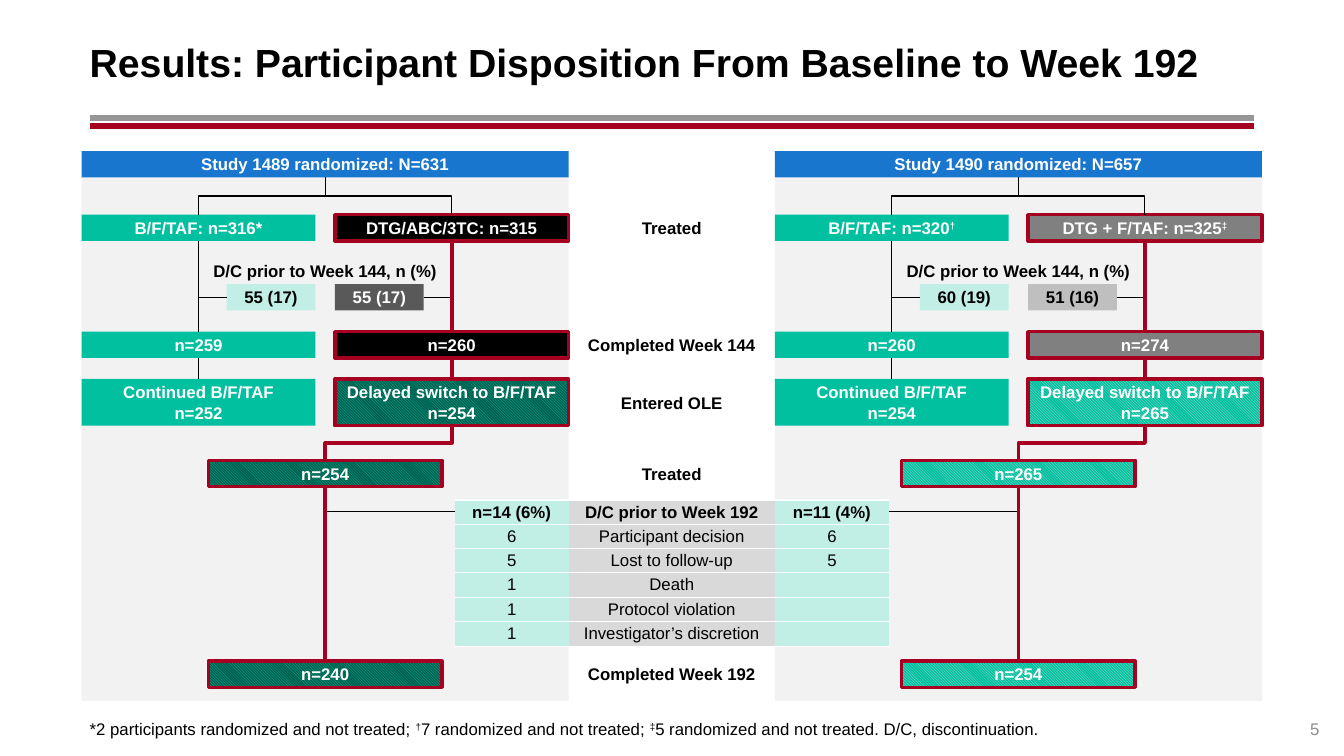
from itertools import groupby

from lxml.etree import SubElement
from pptx import Presentation
from pptx.dml.color import RGBColor
from pptx.enum.dml import MSO_PATTERN
from pptx.enum.shapes import MSO_CONNECTOR as Line, MSO_SHAPE
from pptx.enum.text import MSO_ANCHOR as Anchor, MSO_AUTO_SIZE, PP_ALIGN as Align
from pptx.oxml.ns import qn
from pptx.util import Cm, Pt

BLACK = RGBColor(0x00, 0x00, 0x00)
WHITE = RGBColor(0xFF, 0xFF, 0xFF)
RED = RGBColor(0xA5, 0x00, 0x21)
BLUE = RGBColor(0x19, 0x76, 0xCF)
TEAL = RGBColor(0x00, 0xC0, 0xA0)
DARK_TEAL = RGBColor(0x00, 0x60, 0x50)
PALE_TEAL = RGBColor(0xB8, 0xE2, 0xD8)
MINT = RGBColor(0xC1, 0xEF, 0xE6)
PANEL_GRAY = RGBColor(0xF2, 0xF2, 0xF2)
CELL_GRAY = RGBColor(0xD9, 0xD9, 0xD9)
SILVER = RGBColor(0xBF, 0xBF, 0xBF)
RULE_GRAY = RGBColor(0x96, 0x96, 0x96)
NUMBER_GRAY = RGBColor(0x8C, 0x8C, 0x8C)
MID_GRAY = RGBColor(0x80, 0x80, 0x80)
DARK_GRAY = RGBColor(0x59, 0x59, 0x59)

TITLE = "Results: Participant Disposition From Baseline to Week 192"
FOOTNOTE = ("*2 participants randomized and not treated; †7 randomized and not treated; "
            "‡5 randomized and not treated. D/C, discontinuation.")
SLIDE_NUMBER = "5"
DISCONTINUED = "D/C prior to Week 144, n (%)"
STUDIES = [
    dict(left=2.06, header="Study 1489 randomized: N=631",
         arms=("B/F/TAF: n=316*", "DTG/ABC/3TC: n=315"),
         dropouts=("55 (17)", "55 (17)"), completed=("n=259", "n=260"),
         extension=("Continued B/F/TAF\nn=252", "Delayed switch to B/F/TAF\nn=254"),
         treated="n=254", finished="n=240", comparator=BLACK,
         dropout_fill=DARK_GRAY, dropout_color=WHITE, pattern=(TEAL, DARK_TEAL)),
    dict(left=19.53, header="Study 1490 randomized: N=657",
         arms=("B/F/TAF: n=320†", "DTG + F/TAF: n=325‡"),
         dropouts=("60 (19)", "51 (16)"), completed=("n=260", "n=274"),
         extension=("Continued B/F/TAF\nn=254", "Delayed switch to B/F/TAF\nn=265"),
         treated="n=265", finished="n=254", comparator=MID_GRAY,
         dropout_fill=SILVER, dropout_color=BLACK, pattern=(PALE_TEAL, TEAL)),
]
STAGES = [("Treated", 5.41), ("Completed Week 144", 8.36), ("Entered OLE", 9.81),
          ("Treated", 11.6), ("Completed Week 192", 16.66)]
REASONS = [
    ("n=14 (6%)", "D/C prior to Week 192", "n=11 (4%)"),
    ("6", "Participant decision", "6"),
    ("5", "Lost to follow-up", "5"),
    ("1", "Death", ""),
    ("1", "Protocol violation", ""),
    ("1", "Investigator’s discretion", ""),
]

PANEL_WIDTH = 12.27
BOX_WIDTH, BOX_HEIGHT, TALL_HEIGHT = 5.89, 0.66, 1.18
DROPOUT_WIDTH = 2.24
RIGHT_BOX = PANEL_WIDTH - BOX_WIDTH
CENTER_BOX = RIGHT_BOX / 2
COLUMNS = (2.87, 5.2, 2.87)
ROW_HEIGHT = 0.61
TABLE_LEFT = STUDIES[0]["left"] + PANEL_WIDTH - COLUMNS[0]
TABLE_RIGHT = TABLE_LEFT + sum(COLUMNS)
NO_STYLE = "{2D5ABB26-0587-4C30-8999-92F81FD0307C}"

presentation = Presentation()
presentation.slide_width, presentation.slide_height = Cm(33.87), Cm(19.05)
slide = presentation.slides.add_slide(presentation.slide_layouts[1])
shapes = slide.shapes


def write(frame, text, size=12, color=BLACK, bold=True, align=Align.CENTER,
          anchor=Anchor.MIDDLE, margins=(0.25, 0.08, 0.25, 0.08)):
    frame.word_wrap = True
    frame.auto_size = MSO_AUTO_SIZE.NONE
    frame.vertical_anchor = anchor
    frame.margin_left, frame.margin_top, frame.margin_right, frame.margin_bottom = map(Cm, margins)
    for index, line in enumerate(text.split("\n")):
        paragraph = frame.add_paragraph() if index else frame.paragraphs[0]
        paragraph.alignment = align
        paragraph.space_before = Pt(0)
        for is_mark, letters in groupby(line, key=lambda letter: letter in "†‡"):
            run = paragraph.add_run()
            run.text = "".join(letters)
            run.font.name, run.font.size, run.font.bold = "Arial", Pt(size), bold
            run.font.color.rgb = color
            if is_mark:
                run.font._element.set("baseline", "30000")


def place(shape, left, top, width, height):
    shape.left, shape.top, shape.width, shape.height = map(Cm, (left, top, width, height))


def add_label(text, left, top, width, height=BOX_HEIGHT, **text_format):
    label = shapes.add_textbox(*map(Cm, (left, top, width, height)))
    write(label.text_frame, text, **text_format)


def add_box(text, left, top, fill, width=BOX_WIDTH, height=BOX_HEIGHT, outlined=False, color=WHITE):
    box = shapes.add_shape(MSO_SHAPE.RECTANGLE, *map(Cm, (left, top, width, height)))
    box.shadow.inherit = False
    if isinstance(fill, RGBColor):
        box.fill.solid()
        box.fill.fore_color.rgb = fill
    else:
        box.fill.patterned()
        box.fill.pattern = MSO_PATTERN.LIGHT_DOWNWARD_DIAGONAL
        box.fill.fore_color.rgb, box.fill.back_color.rgb = fill
    if outlined:
        box.line.color.rgb = RED
        box.line.width = Pt(2.5)
    else:
        box.line.fill.background()
    if text:
        write(box.text_frame, text, color=color)
    return box


def add_line(points=(0, 0, 0, 0), color=BLACK, weight=0.75, kind=Line.STRAIGHT, begin=None, end=None):
    connector = shapes.add_connector(kind, *map(Cm, points))
    connector.line.color.rgb = color
    connector.line.width = Pt(weight)
    SubElement(connector._element.spPr, qn("a:effectLst"))
    if begin:
        connector.begin_connect(*begin)
    if end:
        connector.end_connect(*end)
    return connector


def add_drop(upper, lower, **line_format):
    return add_line(begin=(upper, 2), end=(lower, 0), **line_format)


def add_elbow(upper, lower, **line_format):
    elbow = add_drop(upper, lower, kind=Line.ELBOW, **line_format)
    across, down = elbow.end_x - elbow.begin_x, elbow.end_y - elbow.begin_y
    middle_x, middle_y = elbow.begin_x + across // 2, elbow.begin_y + down // 2
    frame = elbow._element.spPr.find(qn("a:xfrm"))
    frame.set("rot", str((270 if across > 0 else 90) * 60000))
    frame.set("flipH", "1" if across > 0 else "0")
    elbow.width, elbow.height = down, abs(across)
    elbow.left, elbow.top = middle_x - down // 2, middle_y - abs(across) // 2


def add_study(study):
    left = study["left"]
    right, center = left + RIGHT_BOX, left + CENTER_BOX
    left_axis, right_axis = left + BOX_WIDTH / 2, right + BOX_WIDTH / 2
    middle = left + PANEL_WIDTH / 2
    red = dict(color=RED, weight=2.5)
    pattern = study["pattern"]

    add_box("", left, 4.17, PANEL_GRAY, width=PANEL_WIDTH, height=13.49)
    header = add_box(study["header"], left, 3.81, BLUE, width=PANEL_WIDTH)
    left_column, right_column = [], []
    for key, top, height, fill in (("arms", 5.41, BOX_HEIGHT, study["comparator"]),
                                   ("completed", 8.36, BOX_HEIGHT, study["comparator"]),
                                   ("extension", 9.55, TALL_HEIGHT, pattern)):
        left_text, right_text = study[key]
        left_column.append(add_box(left_text, left, top, TEAL, height=height))
        right_column.append(add_box(right_text, right, top, fill, height=height, outlined=True))
    treated = add_box(study["treated"], center, 11.6, pattern, outlined=True)
    finished = add_box(study["finished"], center, 16.66, pattern, outlined=True)
    add_label(DISCONTINUED, middle - 3.2, 6.5, 6.4)
    left_dropout = add_box(study["dropouts"][0], left + BOX_WIDTH - DROPOUT_WIDTH, 7.16, MINT,
                           width=DROPOUT_WIDTH, color=BLACK)
    right_dropout = add_box(study["dropouts"][1], right, 7.16, study["dropout_fill"],
                            width=DROPOUT_WIDTH, color=study["dropout_color"])

    dropout_y = 7.16 + BOX_HEIGHT / 2
    add_line((left_axis, dropout_y) * 2, begin=(left_dropout, 1))
    add_line((right_axis, dropout_y) * 2, begin=(right_dropout, 3))
    table_edge = TABLE_LEFT if middle < TABLE_LEFT else TABLE_RIGHT
    add_line((table_edge, 12.9, middle, 12.9))
    add_elbow(header, left_column[0])
    add_elbow(header, right_column[0])
    for upper, lower in zip(left_column, left_column[1:]):
        add_drop(upper, lower)
    for upper, lower in zip(right_column, right_column[1:]):
        add_drop(upper, lower, **red)
    add_elbow(right_column[-1], treated, **red)
    add_drop(treated, finished, **red)


def add_reasons():
    frame = shapes.add_table(len(REASONS), len(COLUMNS), Cm(TABLE_LEFT), Cm(12.6),
                             Cm(sum(COLUMNS)), Cm(ROW_HEIGHT * len(REASONS)))
    table = frame.table
    table.first_row = table.horz_banding = False
    table._tbl.tblPr.find(qn("a:tableStyleId")).text = NO_STYLE
    for column, width in zip(table.columns, COLUMNS):
        column.width = Cm(width)
    for row_index, texts in enumerate(REASONS):
        table.rows[row_index].height = Cm(ROW_HEIGHT)
        for column_index, text in enumerate(texts):
            cell = table.cell(row_index, column_index)
            properties = cell._tc.get_or_add_tcPr()
            for side in ("a:lnT", "a:lnB"):
                border = SubElement(properties, qn(side), w="12700")
                SubElement(SubElement(border, qn("a:solidFill")), qn("a:srgbClr"), val=str(WHITE))
            cell.fill.solid()
            cell.fill.fore_color.rgb = CELL_GRAY if column_index == 1 else MINT
            cell.vertical_anchor = Anchor.MIDDLE
            cell.margin_left = cell.margin_right = Cm(0.13)
            cell.margin_top = cell.margin_bottom = Cm(0.05)
            paragraph = cell.text_frame.paragraphs[0]
            paragraph.alignment = Align.CENTER
            if text:
                run = paragraph.add_run()
                run.text = text
                run.font.name, run.font.size, run.font.bold = "Arial", Pt(12), row_index == 0
                run.font.color.rgb = BLACK
            else:
                SubElement(paragraph._p, qn("a:endParaRPr"), sz="1200")


title, footnote = shapes.title, slide.placeholders[1]
place(title, 2.26, 0.46, 29.34, 2.18)
write(title.text_frame, TITLE, size=28, align=Align.LEFT, margins=(0, 0.13, 0.25, 0.13))
place(footnote, 2.26, 18.11, 29.34, 0.51)
write(footnote.text_frame, FOOTNOTE, bold=False, align=Align.LEFT, anchor=Anchor.BOTTOM, margins=(0, 0, 0, 0))
list_format = footnote.text_frame.paragraphs[0]._p.get_or_add_pPr()
list_format.set("marL", "0")
list_format.set("indent", "0")
SubElement(list_format, qn("a:buNone"))

for rule_y, rule_color in ((2.97, RULE_GRAY), (3.18, RED)):
    add_line((2.26, rule_y, 31.6, rule_y), color=rule_color, weight=4.25)
for study in STUDIES:
    add_study(study)
for stage, top in STAGES:
    add_label(stage, 14.18, top, 5.5)
add_reasons()
add_label(SLIDE_NUMBER, 31.6, 17.6, 1.65, height=1.02, color=NUMBER_GRAY, bold=False,
          align=Align.RIGHT, anchor=Anchor.BOTTOM, margins=(0, 0, 0, 0))

presentation.save("out.pptx")
